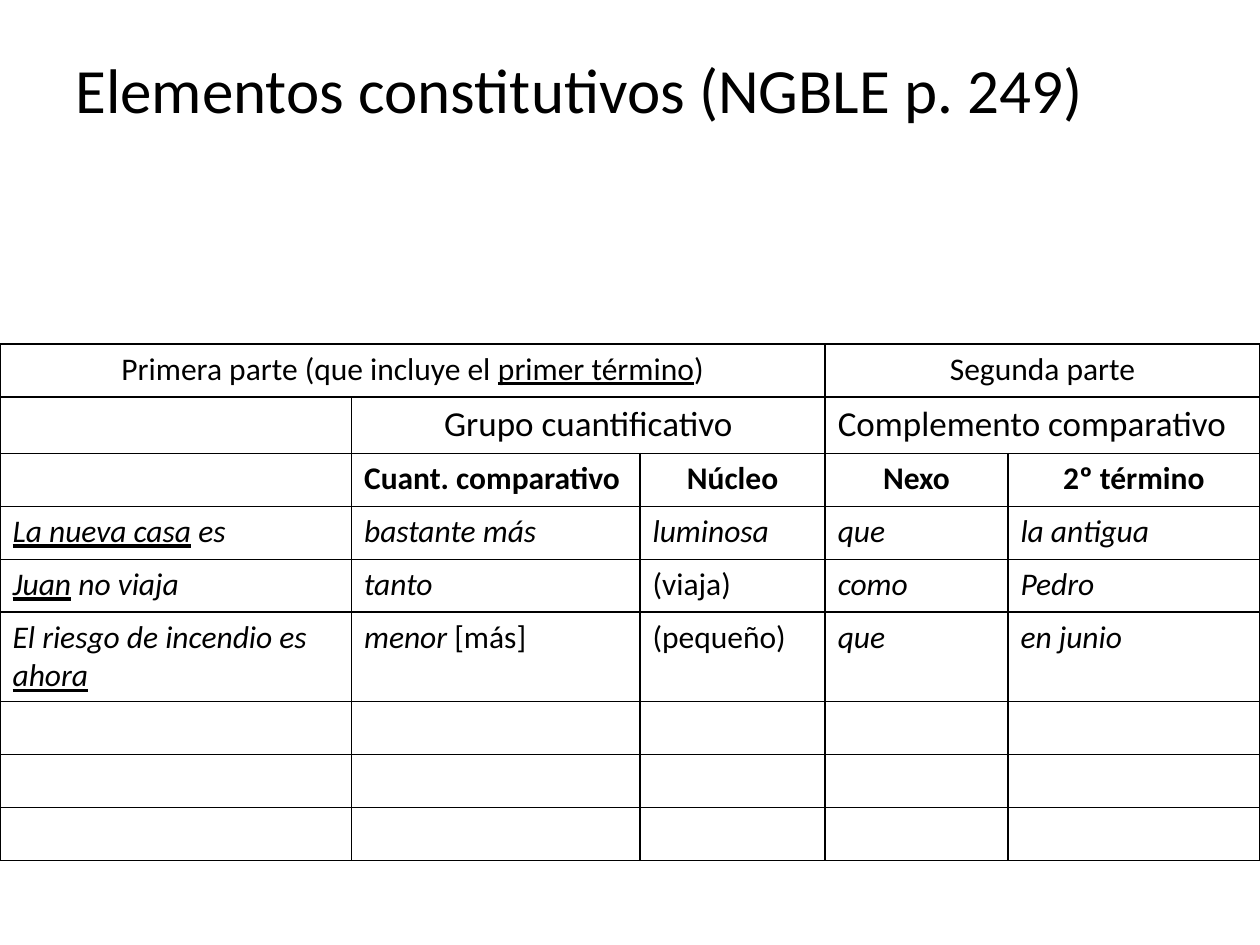
from lxml.etree import SubElement
from pptx import Presentation
from pptx.dml.color import RGBColor
from pptx.enum.text import MSO_ANCHOR, PP_ALIGN
from pptx.oxml.ns import qn
from pptx.util import Inches, Pt

THEME = {
    "font": "Calibri", "ink": "000000", "paper": "FFFFFF",
    "title": 36, "group": 20, "body": 18, "border": 1,
}

# Content: a run is (text, style letters), with b bold, i italic, u underlined
TITLE = "Elementos constitutivos (NGBLE p. 249)"

# Headings: (row, first column, columns spanned, size, centred, runs)
HEADINGS = [
    (0, 0, 3, "body", True, [("Primera parte (que incluye el ", ""),
                             ("primer término", "u"), (")", "")]),
    (0, 3, 2, "body", True, [("Segunda parte", "")]),
    (1, 1, 2, "group", True, [("Grupo cuantificativo", "")]),
    (1, 3, 2, "group", False, [("Complemento comparativo", "")]),
    (2, 1, 1, "body", False, [("Cuant. comparativo", "b")]),
    (2, 2, 1, "body", True, [("Núcleo", "b")]),
    (2, 3, 1, "body", True, [("Nexo", "b")]),
    (2, 4, 1, "body", True, [("2º término", "b")]),
]
EXAMPLES = [
    [[("La nueva casa", "iu"), (" es", "i")], [("bastante más", "i")],
     [("luminosa", "i")], [("que", "i")], [("la antigua", "i")]],
    [[("Juan", "iu"), (" no viaja", "i")], [("tanto", "i")],
     [("(viaja)", "")], [("como", "i")], [("Pedro", "i")]],
    [[("El riesgo de incendio es ", "i"), ("ahora", "iu")],
     [("menor", "i"), (" [más]", "")],
     [("(pequeño)", "")], [("que", "i")], [("en junio", "i")]],
]
FIRST_EXAMPLE = 3

COL_WIDTHS = [2.79, 2.29, 1.47, 1.45, 2]
ROW_HEIGHT = 0.42
ROW_HEIGHTS = [ROW_HEIGHT] * 9
ROW_HEIGHTS[1] = 0.45  # larger group headings
ROW_HEIGHTS[5] = 0.71  # two-line example
TABLE_TOP = 2.73


def write_runs(tf, runs, size, centred=False):
    p = tf.paragraphs[0]
    p.alignment = PP_ALIGN.CENTER if centred else PP_ALIGN.LEFT
    for text, style in runs:
        r = p.add_run()
        r.text = text
        r.font.name = THEME["font"]
        r.font.size = Pt(THEME[size])
        r.font.color.rgb = RGBColor.from_string(THEME["ink"])
        r.font.bold = "b" in style
        r.font.italic = "i" in style
        r.font.underline = "u" in style


def style_cell(cell):
    tc_pr = cell._tc.get_or_add_tcPr()
    for side in ("lnL", "lnR", "lnT", "lnB"):
        ln = SubElement(tc_pr, qn(f"a:{side}"), w=str(Pt(THEME["border"])))
        fill = SubElement(ln, qn("a:solidFill"))
        SubElement(fill, qn("a:srgbClr"), val=THEME["ink"])
    cell.fill.solid()
    cell.fill.fore_color.rgb = RGBColor.from_string(THEME["paper"])


def add_title(s):
    tf = s.shapes.add_textbox(Inches(0.5), Inches(0.3), Inches(9), Inches(1.4)).text_frame
    tf.word_wrap = True
    tf.vertical_anchor = MSO_ANCHOR.TOP
    tf.margin_top = Inches(0.1)
    write_runs(tf, [(TITLE, "")], "title")


def add_comparison_table(s):
    table = s.shapes.add_table(
        len(ROW_HEIGHTS), len(COL_WIDTHS), 0, Inches(TABLE_TOP),
        Inches(sum(COL_WIDTHS)), Inches(sum(ROW_HEIGHTS))).table
    table.first_row = table.horz_banding = False
    for column, width in zip(table.columns, COL_WIDTHS):
        column.width = Inches(width)
    for row, height in zip(table.rows, ROW_HEIGHTS):
        row.height = Inches(height)
    for cell in table.iter_cells():
        style_cell(cell)

    # Headings
    for row, col, span, size, centred, runs in HEADINGS:
        cell = table.cell(row, col)
        if span > 1:
            cell.merge(table.cell(row, col + span - 1))
        write_runs(cell.text_frame, runs, size, centred)

    # Examples
    for row, example in enumerate(EXAMPLES, FIRST_EXAMPLE):
        for col, runs in enumerate(example):
            write_runs(table.cell(row, col).text_frame, runs, "body")


def main():
    prs = Presentation()
    prs.slide_width, prs.slide_height = Inches(10), Inches(7.5)
    s = prs.slides.add_slide(prs.slide_layouts[6])
    add_title(s)
    add_comparison_table(s)
    prs.save("out.pptx")


if __name__ == "__main__":
    main()
